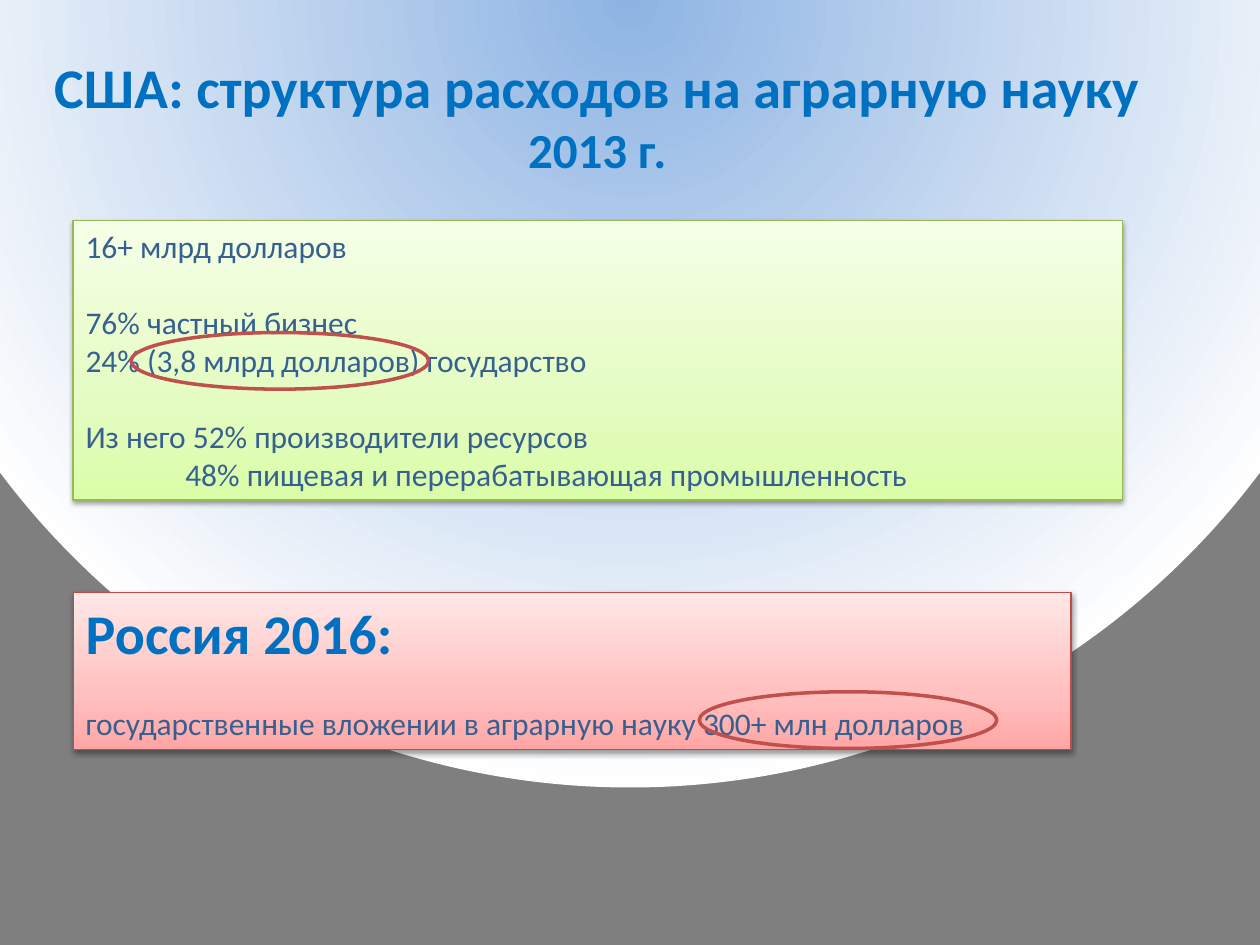
from dataclasses import dataclass

from lxml.etree import SubElement
from pptx import Presentation
from pptx.dml.color import RGBColor
from pptx.enum.shapes import MSO_SHAPE
from pptx.enum.text import MSO_ANCHOR, MSO_AUTO_SIZE, PP_ALIGN
from pptx.oxml.ns import qn
from pptx.util import Pt

COLORS = {
    "heading": "0070C0", "body": "376092", "ring": "C0504D",
    "green_line": "98B955", "red_line": "BF4C48", "shadow": "000000",
}
SKY = [(0, "8EB4E3"), (100, "FEFEFE"), (100, "7F7F7F")]
GREEN = [(0, "DAFDA7"), (35, "E4FCC2"), (100, "F5FFE7")]
RED = [(0, "FFA6A5"), (35, "FFC0BF"), (100, "FFE7E7")]
BLANK_LINE = 22  # height of one 18 pt line


@dataclass
class Span:
    text: str
    size: float = 18
    color: str = "body"
    bold: bool = False


@dataclass
class Line:
    spans: list[Span]
    before: float = 0
    indent: float = 0


@dataclass
class Panel:
    left: float
    top: float
    width: float
    height: float
    stops: list[tuple[int, str]]
    outline: str
    lines: list[Line]


def rgb(name: str) -> RGBColor:
    return RGBColor.from_string(COLORS[name])


def set_stops(gradient, stops: list[tuple[int, str]]) -> None:
    """Replace the content of a gradient fill with the given stops."""
    for child in list(gradient):
        gradient.remove(child)
    stop_list = SubElement(gradient, qn("a:gsLst"))
    for position, color in stops:
        stop = SubElement(stop_list, qn("a:gs"), pos=str(position * 1000))
        SubElement(stop, qn("a:srgbClr"), val=color)


def write_lines(frame, lines: list[Line], align=PP_ALIGN.LEFT) -> None:
    frame.word_wrap = True
    frame.auto_size = MSO_AUTO_SIZE.SHAPE_TO_FIT_TEXT
    frame.vertical_anchor = MSO_ANCHOR.TOP
    for index, line in enumerate(lines):
        para = frame.add_paragraph() if index else frame.paragraphs[0]
        para.alignment = align
        para.space_before = Pt(line.before)
        if line.indent:
            para._p.get_or_add_pPr().set("marL", str(Pt(line.indent)))
        for span in line.spans:
            run = para.add_run()
            run.text = span.text
            run.font.name = "Calibri"
            run.font.size = Pt(span.size)
            run.font.bold = span.bold
            run.font.color.rgb = rgb(span.color)


def draw_background(page) -> None:
    page.background.fill.gradient()
    gradient = page._element.find(".//" + qn("a:gradFill"))
    set_stops(gradient, SKY)
    circle = SubElement(gradient, qn("a:path"), path="circle")
    SubElement(circle, qn("a:fillToRect"),
               l="50000", t="-80000", r="50000", b="180000")


def draw_panel(page, panel: Panel) -> None:
    box = page.shapes.add_shape(
        MSO_SHAPE.RECTANGLE, Pt(panel.left), Pt(panel.top),
        Pt(panel.width), Pt(panel.height))
    box.fill.gradient()
    properties = box._element.spPr
    gradient = properties.find(qn("a:gradFill"))
    set_stops(gradient, panel.stops)
    SubElement(gradient, qn("a:lin"), ang=str(270 * 60000), scaled="0")
    box.line.color.rgb = rgb(panel.outline)
    box.line.width = Pt(0.75)

    # Soft shadow below the panel
    box.shadow.inherit = False
    shadow = SubElement(
        properties.find(qn("a:effectLst")), qn("a:outerShdw"),
        blurRad=str(Pt(3.1)), dist=str(Pt(1.6)), dir=str(90 * 60000),
        rotWithShape="0")
    shade = SubElement(shadow, qn("a:srgbClr"), val=COLORS["shadow"])
    SubElement(shade, qn("a:alpha"), val="38000")
    write_lines(box.text_frame, panel.lines)


def draw_ring(page, left: float, top: float) -> None:
    ring = page.shapes.add_shape(
        MSO_SHAPE.OVAL, Pt(left), Pt(top), Pt(170), Pt(32.4))
    ring.shadow.inherit = False
    ring.fill.background()
    ring.line.color.rgb = rgb("ring")
    ring.line.width = Pt(2)


PANELS = [
    Panel(41.8, 126, 599.8, 159.8, GREEN, "green_line", [
        Line([Span("16+ млрд долларов")]),
        Line([Span("76% частный бизнес")], before=BLANK_LINE),
        Line([Span("24% (3,8 млрд долларов) государство")]),
        Line([Span("Из него 52% производители ресурсов")], before=BLANK_LINE),
        Line([Span("48% пищевая и перерабатывающая промышленность")],
             indent=57),
    ]),
    Panel(41.8, 338.4, 570.2, 90, RED, "red_line", [
        Line([Span("Россия 2016:", 32, "heading", True)]),
        Line([Span("государственные вложении в аграрную науку "
                   "300+ млн долларов")], before=BLANK_LINE),
    ]),
]
RINGS = [(74.9, 190), (399.6, 395.3)]


def main() -> None:
    deck = Presentation()
    deck.slide_width, deck.slide_height = Pt(720), Pt(540)
    page = deck.slides.add_slide(deck.slide_layouts[6])
    draw_background(page)

    # Title
    title = page.shapes.add_textbox(Pt(18), Pt(26.6), Pt(646.6), Pt(80))
    write_lines(title.text_frame, [Line([
        Span("США: структура расходов на аграрную науку ", 32, "heading", True),
        Span("2013 г.", 28, "heading", True),
    ])], PP_ALIGN.CENTER)

    # Spending panels and the rings around the key amounts
    for panel in PANELS:
        draw_panel(page, panel)
    for left, top in RINGS:
        draw_ring(page, left, top)

    deck.save("out.pptx")


if __name__ == "__main__":
    main()
